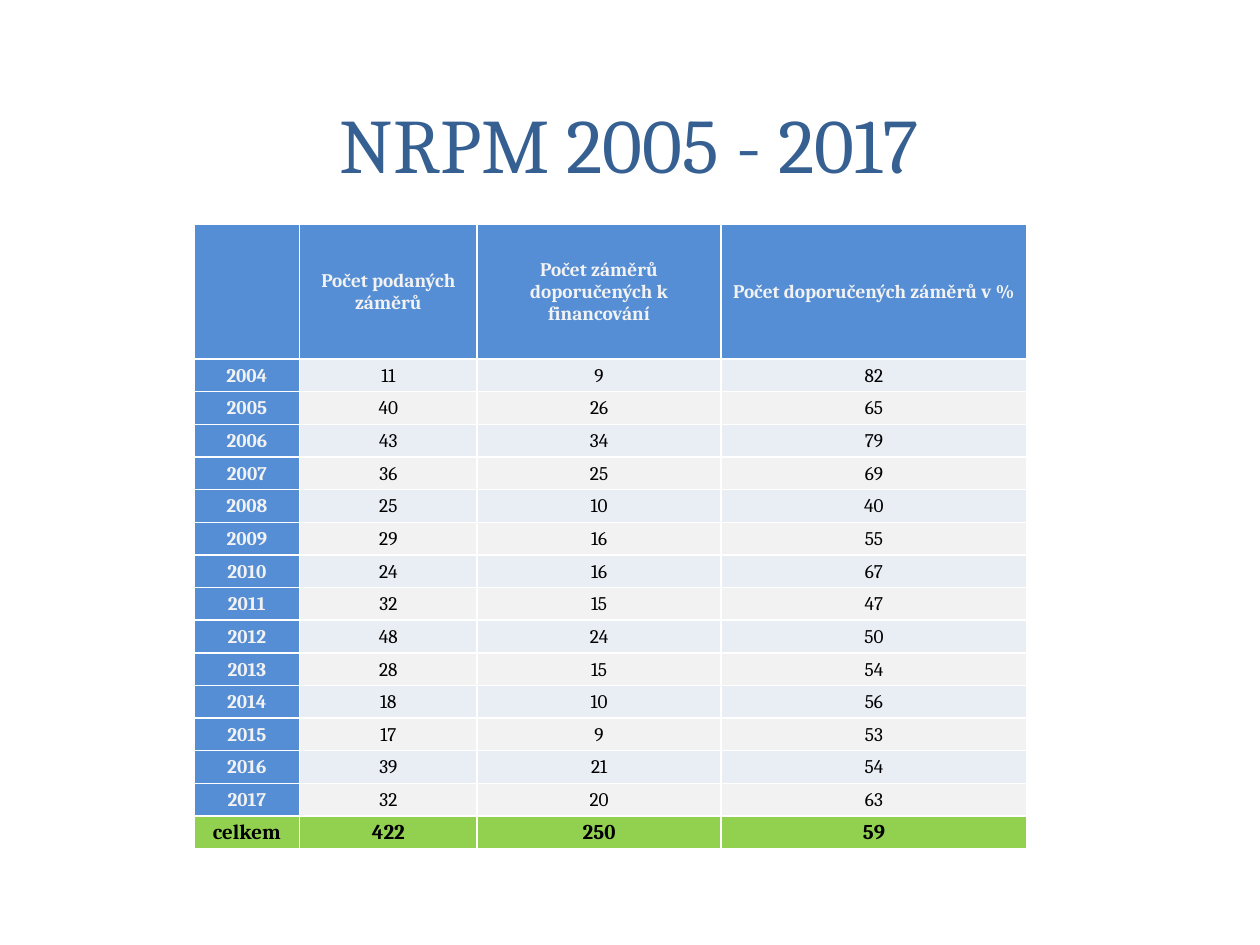
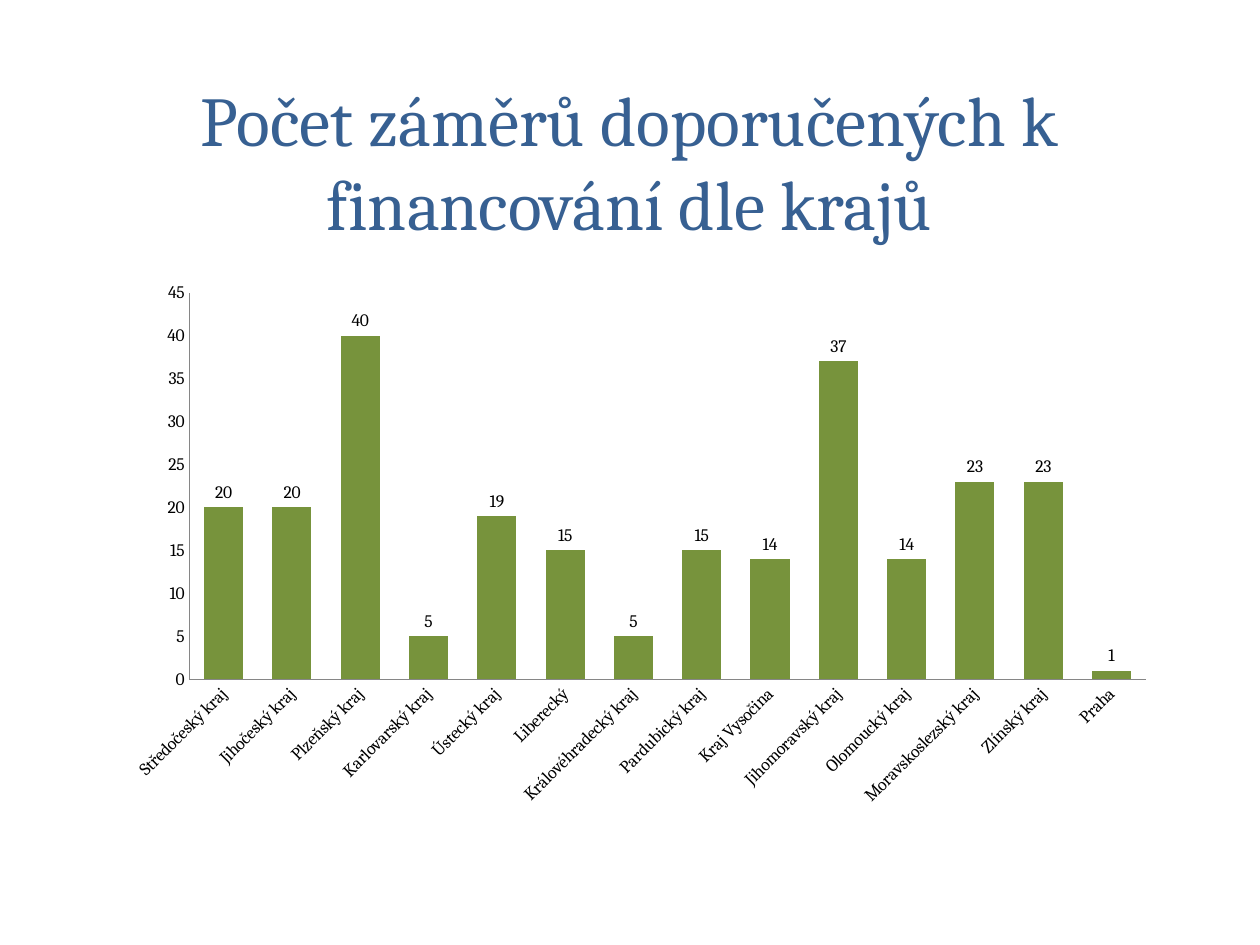
import lxml.etree
import pptx
import pptx.chart.data
import pptx.dml.color
import pptx.enum.chart
import pptx.enum.text
import pptx.oxml.ns
import pptx.util

RGBColor = pptx.dml.color.RGBColor
qn = pptx.oxml.ns.qn

TITLE_BLUE = RGBColor(0x37, 0x60, 0x92)
HEADER_BLUE = RGBColor(0x55, 0x8E, 0xD5)
PALE_GREY = RGBColor(0xF2, 0xF2, 0xF2)
PALE_BLUE = RGBColor(0xE9, 0xED, 0xF4)
TOTAL_GREEN = RGBColor(0x92, 0xD0, 0x50)
BAR_GREEN = RGBColor(0x77, 0x93, 0x3C)
AXIS_GREY = RGBColor(0x86, 0x86, 0x86)
BLACK = RGBColor(0, 0, 0)
FONT = "Cambria"

SLIDE_WIDTH = pptx.util.Inches(10)
SLIDE_HEIGHT = pptx.util.Inches(7.5)
COLUMN = SLIDE_WIDTH // 100
ROW = SLIDE_HEIGHT // 75

HEADINGS = [
    "",
    "Počet podaných záměrů",
    "Počet záměrů doporučených k financování",
    "Počet doporučených záměrů v %",
]
FIRST_YEAR = 2004
YEARLY_COUNTS = [
    (11, 9, 82), (40, 26, 65), (43, 34, 79), (36, 25, 69), (25, 10, 40),
    (29, 16, 55), (24, 16, 67), (32, 15, 47), (48, 24, 50), (28, 15, 54),
    (18, 10, 56), (17, 9, 53), (39, 21, 54), (32, 20, 63),
]
TOTALS = ("celkem", 422, 250, 59)
COLUMN_SHARES = [8.4, 14.1, 19.4, 24.3]
HEADER_ROWS = 10.7

REGION_COUNTS = {
    "Středočeský kraj": 20,
    "Jihočeský kraj": 20,
    "Plzeňský kraj": 40,
    "Karlovarský kraj": 5,
    "Ústecký kraj": 19,
    "Liberecký": 15,
    "Královéhradecký kraj": 5,
    "Pardubický kraj": 15,
    "Kraj Vysočina": 14,
    "Jihomoravský kraj": 37,
    "Olomoucký kraj": 14,
    "Moravskoslezský kraj": 23,
    "Zlínský kraj": 23,
    "Praha": 1,
}


def grid_box(left, top, width, height):
    return tuple(round(length) for length in
                 (left * COLUMN, top * ROW, width * COLUMN, height * ROW))


def write_centred(text_frame, text, size, color, bold=False):
    paragraph = text_frame.paragraphs[0]
    paragraph.alignment = pptx.enum.text.PP_ALIGN.CENTER
    run = paragraph.add_run()
    run.text = str(text)
    run.font.name = FONT
    run.font.size = pptx.util.Pt(size)
    run.font.bold = bold
    run.font.color.rgb = color


def add_title(slide, box, text, size):
    text_frame = slide.shapes.add_textbox(*box).text_frame
    text_frame.word_wrap = True
    text_frame.vertical_anchor = pptx.enum.text.MSO_ANCHOR.MIDDLE
    write_centred(text_frame, text, size, TITLE_BLUE)


def add_white_borders(cell):
    properties = cell._tc.get_or_add_tcPr()
    for side in ("lnL", "lnR", "lnT", "lnB"):
        line = lxml.etree.SubElement(properties, qn(f"a:{side}"), w=str(pptx.util.Pt(1)))
        fill = lxml.etree.SubElement(line, qn("a:solidFill"))
        lxml.etree.SubElement(fill, qn("a:srgbClr"), val="FFFFFF")


def fill_cell(cell, text, fill, size, color, bold):
    cell.vertical_anchor = pptx.enum.text.MSO_ANCHOR.MIDDLE
    cell.margin_left = cell.margin_right = cell.margin_top = pptx.util.Inches(0.01)
    cell.margin_bottom = 0
    add_white_borders(cell)
    cell.fill.solid()
    cell.fill.fore_color.rgb = fill
    if text != "":
        write_centred(cell.text_frame, text, size, color, bold)


def cell_style(row, column, last_row):
    if row == last_row:
        return TOTAL_GREEN, 12, BLACK, True
    if row == 0 or column == 0:
        return HEADER_BLUE, 11, PALE_GREY, True
    return (PALE_BLUE if row % 2 else PALE_GREY), 11, BLACK, False


def add_yearly_table(slide, box):
    records = [HEADINGS]
    records += [(year, *counts) for year, counts in enumerate(YEARLY_COUNTS, FIRST_YEAR)]
    records.append(TOTALS)
    last_row = len(records) - 1
    left, top, width, height = box
    table = slide.shapes.add_table(len(records), len(HEADINGS), *box).table
    for column, share in zip(table.columns, COLUMN_SHARES):
        column.width = round(width * share / sum(COLUMN_SHARES))
    header_height = round(HEADER_ROWS * ROW)
    for index, row in enumerate(table.rows):
        row.height = (height - header_height) // last_row if index else header_height
    for row, record in enumerate(records):
        for column, text in enumerate(record):
            fill_cell(table.cell(row, column), text, *cell_style(row, column, last_row))


def set_plot_area(chart, left, top, width, height):
    plot_area = chart.element.find(f".//{qn('c:plotArea')}")
    for layout in plot_area.findall(qn("c:layout")):
        plot_area.remove(layout)
    layout = lxml.etree.Element(qn("c:layout"))
    plot_area.insert(0, layout)
    manual = lxml.etree.SubElement(layout, qn("c:manualLayout"))
    settings = {"layoutTarget": "inner", "xMode": "edge", "yMode": "edge",
                "x": left, "y": top, "w": width, "h": height}
    for name, value in settings.items():
        lxml.etree.SubElement(manual, qn(f"c:{name}"), val=str(value))


def style_axis(axis):
    axis.has_major_gridlines = False
    axis.major_tick_mark = axis.minor_tick_mark = pptx.enum.chart.XL_TICK_MARK.NONE
    axis.format.line.color.rgb = AXIS_GREY
    axis.format.line.width = pptx.util.Pt(0.75)
    style_font(axis.tick_labels.font)


def style_font(font):
    font.name = FONT
    font.size = pptx.util.Pt(10)
    font.color.rgb = BLACK


def add_region_chart(slide, box):
    chart_data = pptx.chart.data.CategoryChartData()
    chart_data.categories = list(REGION_COUNTS)
    chart_data.add_series("Series 1", list(REGION_COUNTS.values()))
    chart = slide.shapes.add_chart(
        pptx.enum.chart.XL_CHART_TYPE.COLUMN_CLUSTERED, *box, chart_data).chart
    chart.has_title = False
    chart.has_legend = False
    style_font(chart.font)
    set_plot_area(chart, 0.07, 0.05, 0.91, 0.69)

    style_axis(chart.category_axis)
    style_axis(chart.value_axis)
    chart.value_axis.minimum_scale = 0
    chart.value_axis.maximum_scale = 45
    chart.value_axis.major_unit = 5
    label_body = chart.element.find(
        f".//{qn('c:catAx')}/{qn('c:txPr')}/{qn('a:bodyPr')}")
    label_body.set("rot", str(-45 * 60000))

    plot = chart.plots[0]
    plot.gap_width = 75
    plot.vary_by_categories = False
    bars = plot.series[0]
    bars.format.fill.solid()
    bars.format.fill.fore_color.rgb = BAR_GREEN
    labels = bars.data_labels
    labels.show_value = True
    labels.position = pptx.enum.chart.XL_LABEL_POSITION.OUTSIDE_END
    style_font(labels.font)


def main():
    presentation = pptx.Presentation()
    presentation.slide_width = SLIDE_WIDTH
    presentation.slide_height = SLIDE_HEIGHT
    blank_layout = presentation.slide_layouts[6]

    table_slide = presentation.slides.add_slide(blank_layout)
    add_title(table_slide, grid_box(6, 2.1, 87.9, 18.5), "NRPM 2005 - 2017", 44)
    add_yearly_table(table_slide, grid_box(15.4, 17.8, 66.1, 49.6))

    chart_slide = presentation.slides.add_slide(blank_layout)
    add_title(chart_slide, grid_box(6, 4.8, 87.9, 15.8),
              "Počet záměrů doporučených k financování dle krajů", 40)
    add_region_chart(chart_slide, grid_box(9.2, 21, 83.4, 44.5))

    presentation.save("out.pptx")


if __name__ == "__main__":
    main()
